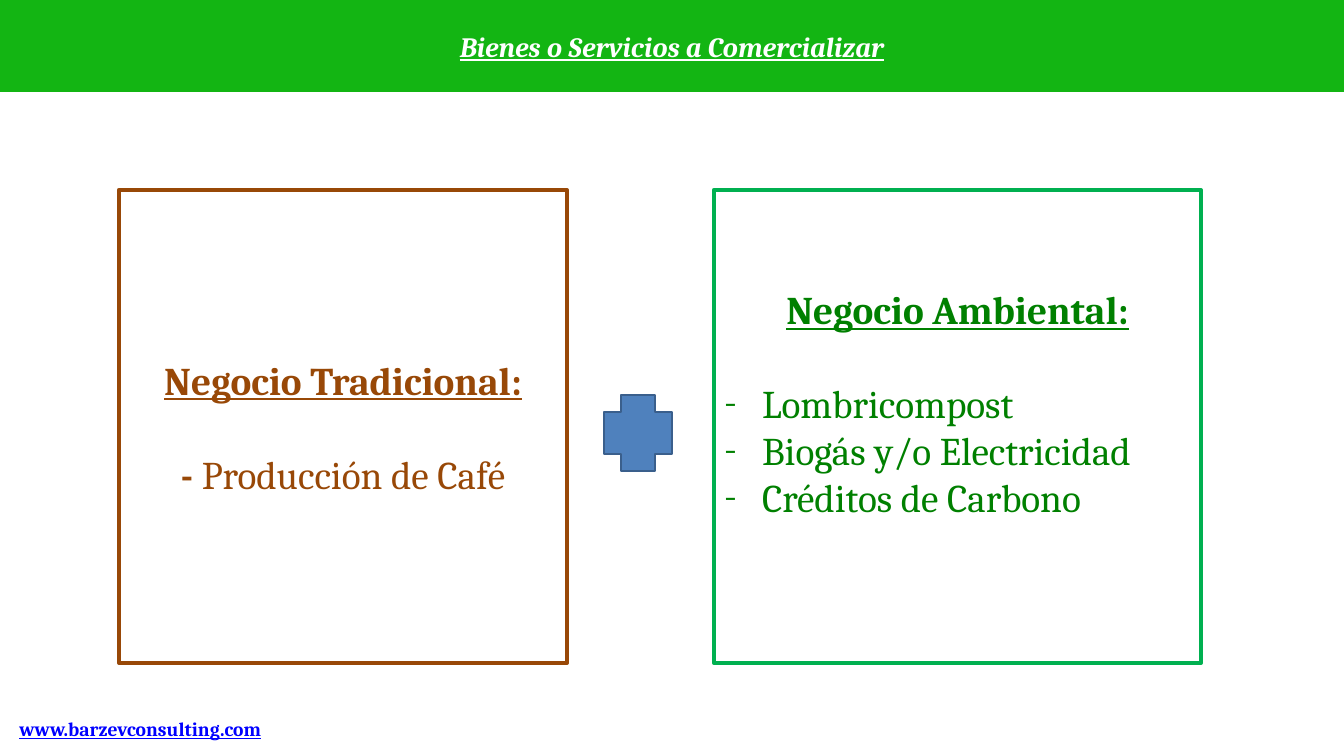
from dataclasses import dataclass

from lxml.etree import SubElement
from pptx import Presentation
from pptx.dml.color import RGBColor
from pptx.enum.shapes import MSO_SHAPE
from pptx.enum.text import MSO_ANCHOR, MSO_AUTO_SIZE, PP_ALIGN
from pptx.oxml.ns import qn
from pptx.util import Pt

EMU_PER_PX = 914400 / 100.8


def px(length):
    """Turn whole pixels into EMU."""
    return round(length * EMU_PER_PX)


@dataclass(frozen=True)
class Theme:
    """Colours, font and type sizes of the slide."""
    font: str = "Cambria"
    white: str = "FFFFFF"
    banner: str = "13B513"
    brown: str = "984807"
    green: str = "008000"
    green_border: str = "00B050"
    plus_fill: str = "4F81BD"
    plus_border: str = "3A5F8C"
    link: str = "0000FF"
    title_size: int = 20
    panel_size: int = 28
    link_size: int = 14
    panel_gap: float = 33.5


class SlideBuilder:
    """Add styled elements to one slide."""

    def __init__(self, slide, theme):
        """Keep the slide and its theme."""
        self.slide = slide
        self.theme = theme

    def apply(self, target, values):
        """Set each named value on the target."""
        for name, value in values.items():
            setattr(target, name, value)

    def place(self, element, box):
        """Move an element to a pixel box."""
        names = ("left", "top", "width", "height")
        self.apply(element, dict(zip(names, map(px, box))))

    def paint(self, element, fill=None, border=None, weight=0):
        """Fill and outline an element."""
        if fill:
            element.fill.solid()
            element.fill.fore_color.rgb = RGBColor.from_string(fill)
        if border:
            element.line.color.rgb = RGBColor.from_string(border)
            element.line.width = Pt(weight)

    def frame(self, element, anchor, bottom=5):
        """Prepare the text frame of an element."""
        self.apply(element.text_frame, {
            "word_wrap": True, "auto_size": MSO_AUTO_SIZE.NONE, "vertical_anchor": anchor,
            "margin_left": px(10), "margin_right": px(10),
            "margin_top": px(5), "margin_bottom": px(bottom)})
        return element.text_frame

    def add_runs(self, paragraph, runs, size, color, gap=0, bullet=None):
        """Put formatted runs into a paragraph, with an optional bullet."""
        self.apply(paragraph, {
            "alignment": PP_ALIGN.LEFT if bullet else PP_ALIGN.CENTER,
            "space_before": Pt(gap), "line_spacing": 1.0})
        properties = paragraph._p.get_or_add_pPr()
        indent = px(38) if bullet else 0
        properties.set("marL", str(indent))
        properties.set("indent", str(-indent))
        if bullet:
            SubElement(properties, qn("a:buFont"), typeface=self.theme.font)
            SubElement(properties, qn("a:buChar"), char=bullet)
        else:
            SubElement(properties, qn("a:buNone"))
        for words, style in runs:
            run = paragraph.add_run()
            run.text = words
            self.apply(run.font, {"name": self.theme.font, "size": Pt(size), "bold": False,
                                  "italic": False, "underline": False, **style})
            run.font.color.rgb = RGBColor.from_string(color)

    def title(self, words, box):
        """Turn the title placeholder into the banner."""
        banner = self.slide.shapes.title
        self.place(banner, box)
        self.paint(banner, self.theme.banner)
        style = {"bold": True, "italic": True, "underline": True}
        self.add_runs(self.frame(banner, MSO_ANCHOR.MIDDLE).paragraphs[0], [(words, style)],
                      self.theme.title_size, self.theme.white)

    def panel(self, index, box, color, border, heading, lines, bullet=None, bottom=5):
        """Turn a body placeholder into an outlined panel."""
        business = self.slide.placeholders[index]
        self.place(business, box)
        self.paint(business, border=border, weight=3)
        text = self.frame(business, MSO_ANCHOR.MIDDLE, bottom)
        size = self.theme.panel_size
        self.add_runs(text.paragraphs[0], [(heading, {"bold": True, "underline": True})],
                      size, color)
        for number, runs in enumerate(lines):
            gap = 0 if number else self.theme.panel_gap
            self.add_runs(text.add_paragraph(), runs, size, color, gap, bullet)

    def plus(self, box):
        """Draw the plus sign."""
        sign = self.slide.shapes.add_shape(MSO_SHAPE.CROSS, *map(px, box))
        sign.shadow.inherit = False
        self.paint(sign, self.theme.plus_fill, self.theme.plus_border, 2)

    def website(self, address, box):
        """Show the web address."""
        footer = self.slide.shapes.add_textbox(*map(px, box))
        self.paint(footer, self.theme.white)
        self.add_runs(self.frame(footer, MSO_ANCHOR.TOP).paragraphs[0],
                      [(address, {"bold": True, "underline": True})],
                      self.theme.link_size, self.theme.link)


def main():
    """Build and save the slide."""
    presentation = Presentation()
    presentation.slide_width, presentation.slide_height = px(1344), px(756)
    theme = Theme()
    builder = SlideBuilder(presentation.slides.add_slide(presentation.slide_layouts[3]), theme)
    builder.website("www.barzevconsulting.com", (6, 712, 269, 34))
    builder.panel(1, (119, 190, 448, 473), theme.brown, theme.brown, "Negocio Tradicional:",
                  [[("- ", {"bold": True}), ("Producción de Café", {})]])
    products = ("Lombricompost", "Biogás y/o Electricidad", "Créditos de Carbono")
    builder.panel(2, (714, 190, 487, 473), theme.green, theme.green_border, "Negocio Ambiental:",
                  [[(product, {})] for product in products], bullet="-", bottom=52)
    builder.title("Bienes o Servicios a Comercializar", (0, 0, 1344, 92))
    builder.plus((604, 395, 68, 76))
    presentation.save("out.pptx")


if __name__ == "__main__":
    main()
